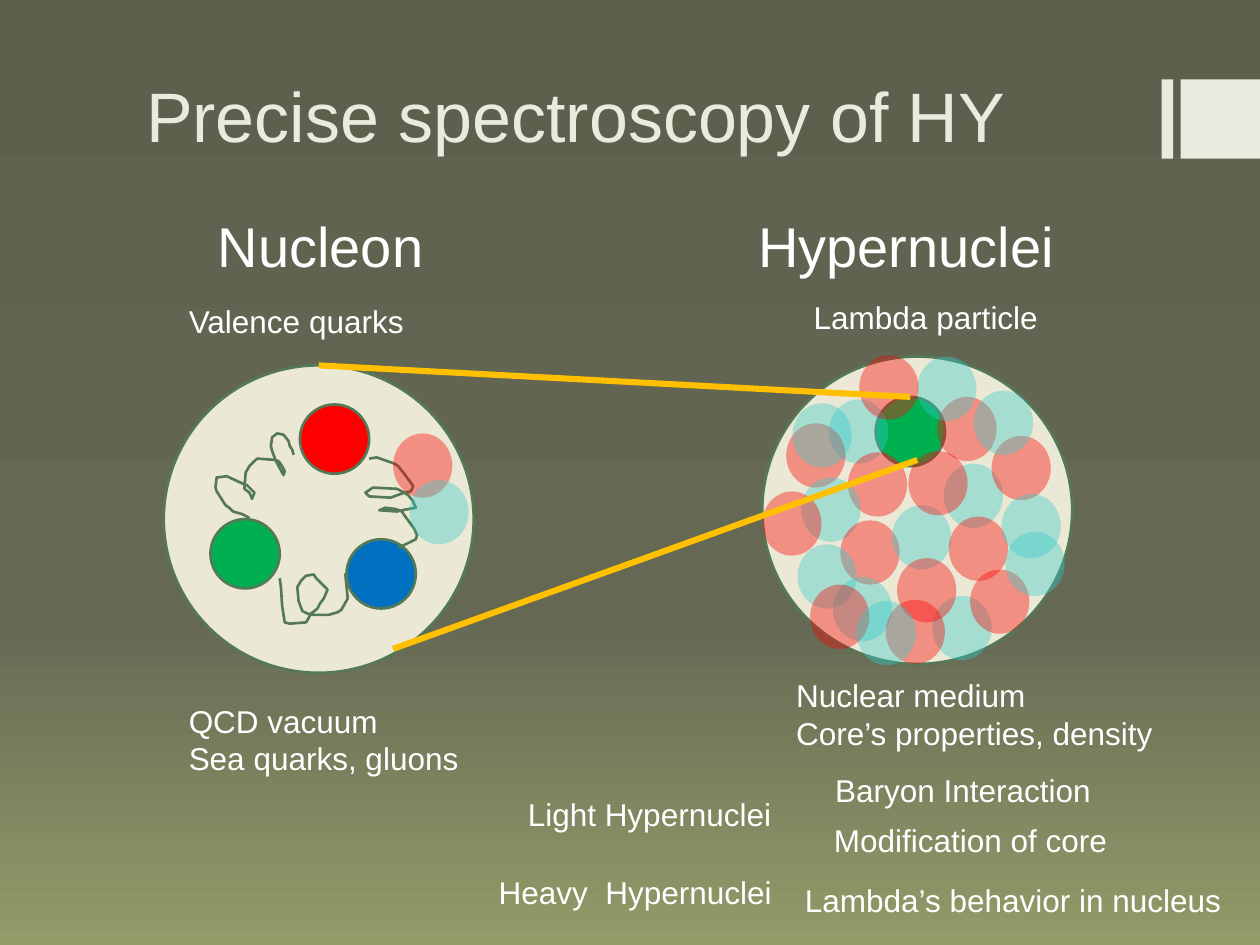
"""Build the slide comparing a nucleon with hypernuclei."""
from copy import deepcopy

from pptx import Presentation
from pptx.dml.color import RGBColor
from pptx.enum.shapes import MSO_CONNECTOR, MSO_SHAPE
from pptx.enum.text import MSO_ANCHOR, MSO_AUTO_SIZE, PP_ALIGN
from pptx.oxml.ns import qn
from pptx.oxml.xmlchemy import OxmlElement
from pptx.util import Inches, Pt

COLORS = {
    "title": "EAEBDE", "text": "FFFFFF", "disc": "EBE8D5", "outline": "547957",
    "red": "FF0000", "green": "00B050", "blue": "0070C0", "teal": "33CCCC",
    "zoom": "FFC000", "top": "5D604D", "middle": "656853", "bottom": "939B69",
}
BACKGROUND = [(0, "top"), (0.65, "middle"), (1, "bottom")]
FONT, TITLE_SIZE, HEADING_SIZE, LABEL_SIZE = "Arial", 40, 32, 18
OUTLINE_WIDTH, ZOOM_WIDTH, CLOUD_ALPHA = 1.5, 3.5, 0.38

SLIDE_W, SLIDE_H = 10, 7.5
TITLE_BOX = (1.06, 0.03, 8, 1.26)
BAR_TOP, BAR_SIDE, BAR_GAP, BAR_THIN = 0.63, 0.63, 0.06, 0.09
DISC, BALL, CLOUD = (2.46, 2.44), (0.55, 0.55), (0.47, 0.51)
NUCLEON_AT, NUCLEUS_AT, LAMBDA_AT = (1.3, 2.9), (6.05, 2.83), (6.95, 3.15)
LOWER_ZOOM = ((3.12, 5.15), (7.28, 3.65))
HEADING_TOP, LEFT_COLUMN = 1.63, 1.4

TITLE = "Precise spectroscopy of HY"
HEADINGS = [("Nucleon", 1.63, HEADING_TOP, 1.85), ("Hypernuclei", 5.92, HEADING_TOP, 2.57)]
LABELS = [
    ("Valence quarks", LEFT_COLUMN, 2.35, 1.92),
    ("QCD vacuum\nSea quarks, gluons", LEFT_COLUMN, 5.52, 2.36),
    ("Lambda particle", 6.36, 2.32, 2),
    ("Nuclear medium\nCore’s properties, density", 6.22, 5.32, 3.06),
    ("Light Hypernuclei", 4.09, 6.26, 2.15),
    ("Baryon Interaction", 6.53, 6.07, 2.25),
    ("Modification of core", 6.52, 6.47, 2.39),
    ("Heavy  Hypernuclei", 3.86, 6.88, 2.46),
    ("Lambda’s behavior in nucleus", 6.29, 6.94, 3.54),
]
VALENCE_QUARKS = [("red", 2.38, 3.21), ("green", 1.67, 4.12), ("blue", 2.75, 4.28)]
SEA_QUARKS = [("red", 3.12, 3.44), ("teal", 3.25, 3.81)]
CORE_NUCLEONS = [
    ("teal", 6.58, 3.17), ("red", 6.24, 3.36), ("red", 6.73, 3.59),
    ("teal", 6.36, 3.79), ("red", 6.67, 4.13), ("teal", 7.08, 4.01),
    ("teal", 7.49, 3.68), ("red", 7.21, 3.58), ("teal", 6.33, 4.32),
    ("red", 7.44, 3.15), ("red", 7.53, 4.1), ("teal", 7.4, 4.73),
    ("red", 7.7, 4.52), ("red", 7.12, 4.43), ("red", 7.87, 3.46),
    ("teal", 7.95, 3.92), ("teal", 7.28, 2.83), ("teal", 6.61, 4.58),
    ("red", 6.05, 3.9), ("red", 6.82, 2.82), ("teal", 7.73, 3.1),
    ("teal", 7.98, 4.22), ("red", 7.03, 4.76), ("red", 6.43, 4.64),
    ("teal", 6.8, 4.77), ("teal", 6.29, 3.2),
]
GLUONS = {
    "green to red": [
        (1.98, 4.11), (1.92, 4.08), (1.85, 4.06), (1.82, 4.03), (1.79, 4.01),
        (1.72, 3.9), (1.71, 3.87), (1.72, 3.79), (1.8, 3.78), (1.93, 3.84),
        (1.96, 3.85), (2.02, 3.91), (2, 3.96), (1.98, 3.91), (1.94, 3.88),
        (1.95, 3.75), (1.98, 3.7), (2.04, 3.64), (2.18, 3.65), (2.21, 3.66),
        (2.24, 3.7), (2.26, 3.74), (2.25, 3.77), (2.19, 3.66), (2.16, 3.58),
        (2.15, 3.54), (2.16, 3.47), (2.2, 3.44), (2.25, 3.45), (2.29, 3.5),
        (2.3, 3.54), (2.32, 3.57), (2.33, 3.61)],
    "green to blue": [
        (2.22, 4.59), (2.23, 4.66), (2.24, 4.81), (2.26, 4.94), (2.3, 4.95),
        (2.43, 4.94), (2.47, 4.87), (2.52, 4.83), (2.54, 4.79), (2.57, 4.75),
        (2.6, 4.68), (2.51, 4.59), (2.49, 4.56), (2.43, 4.57), (2.39, 4.61),
        (2.36, 4.66), (2.37, 4.77), (2.4, 4.85), (2.44, 4.87), (2.49, 4.88),
        (2.61, 4.88), (2.68, 4.86), (2.71, 4.84), (2.76, 4.75), (2.74, 4.55)],
    "red to blue": [
        (2.93, 3.64), (2.99, 3.63), (3.13, 3.68), (3.16, 3.7), (3.2, 3.75),
        (3.26, 3.83), (3.28, 3.86), (3.26, 3.9), (3.21, 3.91), (3.1, 3.95),
        (2.93, 3.94), (2.9, 3.91), (2.96, 3.87), (3.15, 3.88), (3.19, 3.9),
        (3.24, 3.93), (3.28, 3.98), (3.3, 4.03), (3.19, 4.05), (3.15, 4.06),
        (3.01, 4.05), (3.06, 4.03), (3.14, 4.04), (3.19, 4.06), (3.21, 4.09),
        (3.29, 4.2), (3.31, 4.25), (3.3, 4.28), (3.26, 4.3), (3.18, 4.34),
        (3.16, 4.34)],
}


def rgb(name):
    return RGBColor.from_string(COLORS[name])


def inches(*values):
    return [Inches(v) for v in values]


def style_line(sp, color, width):
    sp.line.color.rgb = rgb(color)
    sp.line.width = Pt(width)


def style_text(tf, size, color):
    for p in tf.paragraphs:
        p.alignment = PP_ALIGN.LEFT
        for r in p.runs:
            r.font.name, r.font.size = FONT, Pt(size)
            r.font.color.rgb = rgb(color)


def add_filled(shapes, kind, place, size, color):
    sp = shapes.add_shape(kind, *inches(*place, *size))
    sp.shadow.inherit = False
    sp.fill.solid()
    sp.fill.fore_color.rgb = rgb(color)
    sp.line.fill.background()
    return sp


def add_outlined(shapes, place, size, color):
    sp = add_filled(shapes, MSO_SHAPE.OVAL, place, size, color)
    style_line(sp, "outline", OUTLINE_WIDTH)
    return sp


def add_clouds(shapes, clouds):
    for color, *place in clouds:
        sp = add_filled(shapes, MSO_SHAPE.OVAL, place, CLOUD, color)
        alpha = OxmlElement("a:alpha")
        alpha.set("val", str(round(CLOUD_ALPHA * 100000)))
        sp.element.spPr.find(".//" + qn("a:srgbClr")).append(alpha)


def add_gluon(shapes, points):
    start, *rest = [inches(*point) for point in points]
    builder = shapes.build_freeform(*start)
    builder.add_line_segments(rest, close=False)
    sp = builder.convert_to_shape()
    sp.shadow.inherit = False
    sp.fill.background()
    style_line(sp, "outline", OUTLINE_WIDTH)


def add_zoom_line(shapes, start, end):
    line = shapes.add_connector(MSO_CONNECTOR.STRAIGHT, *inches(*start, *end))
    style_line(line, "zoom", ZOOM_WIDTH)
    line._element.spPr.append(OxmlElement("a:effectLst"))
    return line


def add_labels(shapes, labels, size):
    for text, left, top, width in labels:
        lines = text.count("\n") + 1
        height = 0.1 + lines * size * 1.2 / 72
        tf = shapes.add_textbox(*inches(left, top, width, height)).text_frame
        tf.text = text
        tf.word_wrap = False
        tf.auto_size = MSO_AUTO_SIZE.SHAPE_TO_FIT_TEXT
        style_text(tf, size, "text")


def draw_background(slide):
    fill = slide.background.fill
    fill.gradient()
    fill.gradient_angle = 270
    stops = slide.element.find(".//" + qn("a:gsLst"))
    stops.append(deepcopy(stops[-1]))
    for stop, (position, color) in zip(fill.gradient_stops, BACKGROUND):
        stop.position = position
        stop.color.rgb = rgb(color)


def draw_title(shapes):
    title = shapes.title
    title.left, title.top, title.width, title.height = inches(*TITLE_BOX)
    tf = title.text_frame
    tf.text = TITLE
    tf.vertical_anchor = MSO_ANCHOR.BOTTOM
    tf.auto_size = MSO_AUTO_SIZE.NONE
    style_text(tf, TITLE_SIZE, "title")
    right = SLIDE_W
    for width in (BAR_SIDE, BAR_THIN):
        place = (right - width, BAR_TOP)
        add_filled(shapes, MSO_SHAPE.RECTANGLE, place, (width, BAR_SIDE), "title")
        right -= width + BAR_GAP


def draw_nucleon(shapes):
    nucleon = add_outlined(shapes, NUCLEON_AT, DISC, "disc")
    for color, *place in VALENCE_QUARKS:
        add_outlined(shapes, place, BALL, color)
    for points in GLUONS.values():
        add_gluon(shapes, points)
    add_clouds(shapes, SEA_QUARKS)
    return nucleon


def draw_hypernucleus(shapes):
    add_outlined(shapes, NUCLEUS_AT, DISC, "disc")
    hyperon = add_outlined(shapes, LAMBDA_AT, BALL, "green")
    add_clouds(shapes, CORE_NUCLEONS)
    return hyperon


def main():
    prs = Presentation()
    prs.slide_width, prs.slide_height = inches(SLIDE_W, SLIDE_H)
    slide = prs.slides.add_slide(prs.slide_layouts[5])
    shapes = slide.shapes
    draw_background(slide)
    draw_title(shapes)
    nucleon = draw_nucleon(shapes)
    hyperon = draw_hypernucleus(shapes.add_group_shape().shapes)
    upper = add_zoom_line(shapes, NUCLEON_AT, LAMBDA_AT)
    upper.begin_connect(nucleon, 0)
    upper.end_connect(hyperon, 0)
    add_zoom_line(shapes, *LOWER_ZOOM)
    add_labels(shapes, HEADINGS, HEADING_SIZE)
    add_labels(shapes, LABELS, LABEL_SIZE)
    prs.save("out.pptx")


if __name__ == "__main__":
    main()
